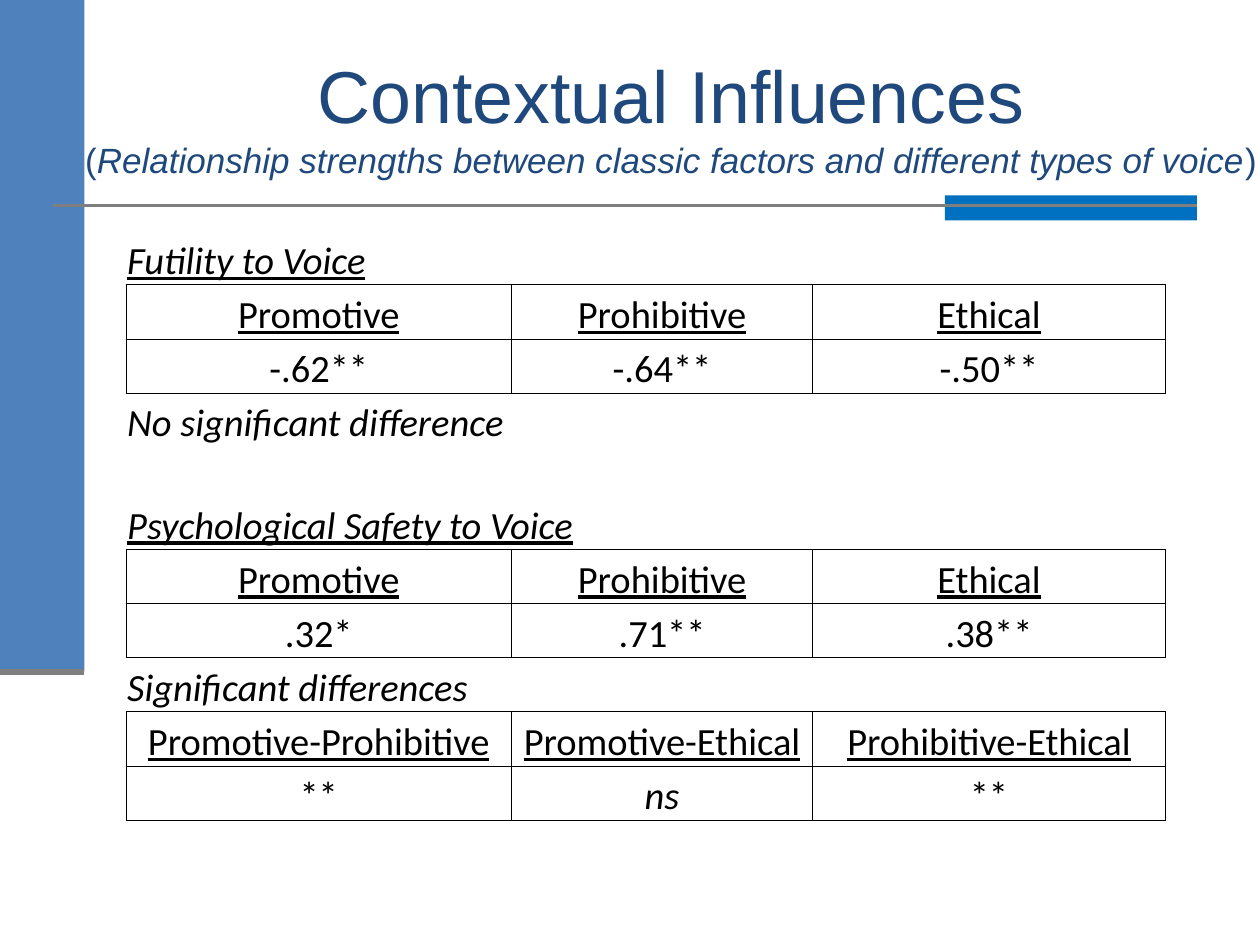
from lxml.etree import SubElement
from pptx import Presentation
from pptx.dml.color import RGBColor
from pptx.enum.shapes import MSO_CONNECTOR, MSO_SHAPE
from pptx.enum.text import MSO_ANCHOR, PP_ALIGN
from pptx.oxml.ns import qn
from pptx.util import Inches, Pt

THEME = {
    "title": RGBColor.from_string("1F497D"),
    "band": RGBColor.from_string("4F81BD"),
    "accent": RGBColor.from_string("0070C0"),
    "rule": RGBColor.from_string("7F7F7F"),
    "text": RGBColor.from_string("000000"),
    "title_font": "Arial",
    "table_font": "Calibri",
    "title_size": Pt(42),
    "subtitle_size": Pt(20),
    "table_size": Pt(22),
}
NO_STYLE_TABLE = "{2D5ABB26-0587-4C30-8999-92F81FD0307C}"


def add_border(cell, side):
    """Draw one thin edge; sides go in the order lnL, lnR, lnT, lnB."""
    line = SubElement(cell._tc.get_or_add_tcPr(), qn(f"a:{side}"), w=str(Pt(0.5)))
    fill = SubElement(line, qn("a:solidFill"))
    SubElement(fill, qn("a:srgbClr"), val=str(THEME["text"]))


presentation = Presentation()
presentation.slide_width, presentation.slide_height = Inches(10), Inches(7.5)
slide = presentation.slides.add_slide(presentation.slide_layouts[5])
shapes = slide.shapes

# Side band and accent bar
band_width, band_height = Inches(0.67), Inches(5.33)
rule_top = Inches(1.63)
for box, color in [
    ((0, 0, band_width, band_height), THEME["band"]),
    ((Inches(7.5), Inches(1.55), Inches(2), Inches(0.2)), THEME["accent"]),
]:
    bar = shapes.add_shape(MSO_SHAPE.RECTANGLE, *box)
    bar.shadow.inherit = False
    bar.fill.solid()
    bar.fill.fore_color.rgb = color
    bar.line.fill.background()

# Rules under the title and the side band
for left, right, top, weight in [
    (Inches(0.42), Inches(9.5), rule_top, 1.5),
    (0, band_width, band_height, 3.5),
]:
    rule = shapes.add_connector(MSO_CONNECTOR.STRAIGHT, left, top, right, top)
    rule.line.color.rgb = THEME["rule"]
    rule.line.width = Pt(weight)
    SubElement(rule._element.spPr, qn("a:effectLst"))

# Title with its subtitle line
title = shapes.title
title.left, title.top = Inches(0.4), Inches(0.11)
title.width, title.height = Inches(9.85), Inches(1.61)
title.text_frame.vertical_anchor = MSO_ANCHOR.MIDDLE
paragraph = title.text_frame.paragraphs[0]
paragraph.alignment = PP_ALIGN.CENTER
paragraph.font.name = THEME["title_font"]
paragraph.font.color.rgb = THEME["title"]
for text, size, italic in [
    ("Contextual Influences", THEME["title_size"], False),
    ("(", THEME["subtitle_size"], False),
    ("Relationship strengths between classic factors and different types of voice",
     THEME["subtitle_size"], True),
    (")", THEME["subtitle_size"], False),
]:
    run = paragraph.add_run()
    run.text = text
    run.font.size = size
    run.font.italic = italic
    if size == THEME["title_size"]:
        paragraph.add_line_break()

# Table rows: kind, then cell texts
VOICE_TYPES = ["Promotive", "Prohibitive", "Ethical"]
rows = [
    ("heading", ["Futility to Voice"]),
    ("header", VOICE_TYPES),
    ("value", ["-.62**", "-.64**", "-.50**"]),
    ("note", ["No significant difference"]),
    ("gap", []),
    ("heading", ["Psychological Safety to Voice"]),
    ("header", VOICE_TYPES),
    ("value", [".32*", ".71**", ".38**"]),
    ("note", ["Significant differences"]),
    ("header", ["Promotive-Prohibitive", "Promotive-Ethical", "Prohibitive-Ethical"]),
    ("value", ["**", "ns", "**"]),
]
BORDERS = {"header": ["lnL", "lnR", "lnT"], "value": ["lnL", "lnR", "lnB"]}
column_widths = [3.06, 2.39, 2.8]
row_height, gap_height = Inches(0.43), Inches(0.38)

table = shapes.add_table(
    len(rows), len(column_widths), Inches(1), Inches(1.83),
    Inches(sum(column_widths)), row_height * (len(rows) - 1) + gap_height,
).table
table.first_row = table.horz_banding = False
table._tbl.tblPr.find(qn("a:tableStyleId")).text = NO_STYLE_TABLE
for column, width in zip(table.columns, column_widths):
    column.width = Inches(width)

for row, (kind, texts) in zip(table.rows, rows):
    row.height = gap_height if kind == "gap" else row_height
    for index, cell in enumerate(row.cells):
        cell.margin_left = cell.margin_right = cell.margin_top = Inches(0.01)
        cell.margin_bottom = 0
        cell.vertical_anchor = MSO_ANCHOR.BOTTOM
        for side in BORDERS.get(kind, []):
            add_border(cell, side)
        cell.fill.background()
        if index >= len(texts):
            continue
        cell.text = texts[index]
        paragraph = cell.text_frame.paragraphs[0]
        paragraph.alignment = PP_ALIGN.CENTER if kind in BORDERS else PP_ALIGN.LEFT
        font = paragraph.font
        font.name, font.size = THEME["table_font"], THEME["table_size"]
        font.color.rgb = THEME["text"]
        font.italic = kind in ("heading", "note") or texts[index] == "ns"
        font.underline = kind in ("heading", "header")

# Long labels run across two columns
for row_index in (5, 8):
    table.cell(row_index, 0).merge(table.cell(row_index, 1))

presentation.save("out.pptx")
